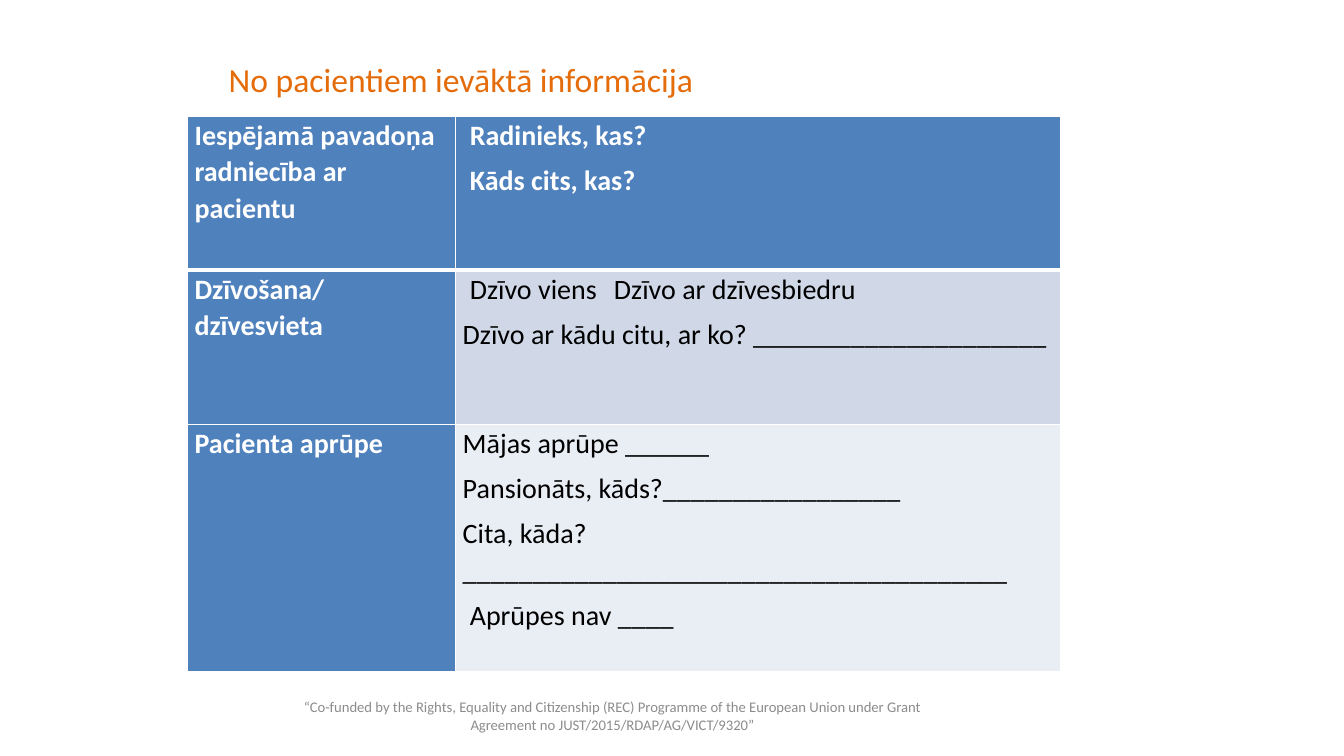
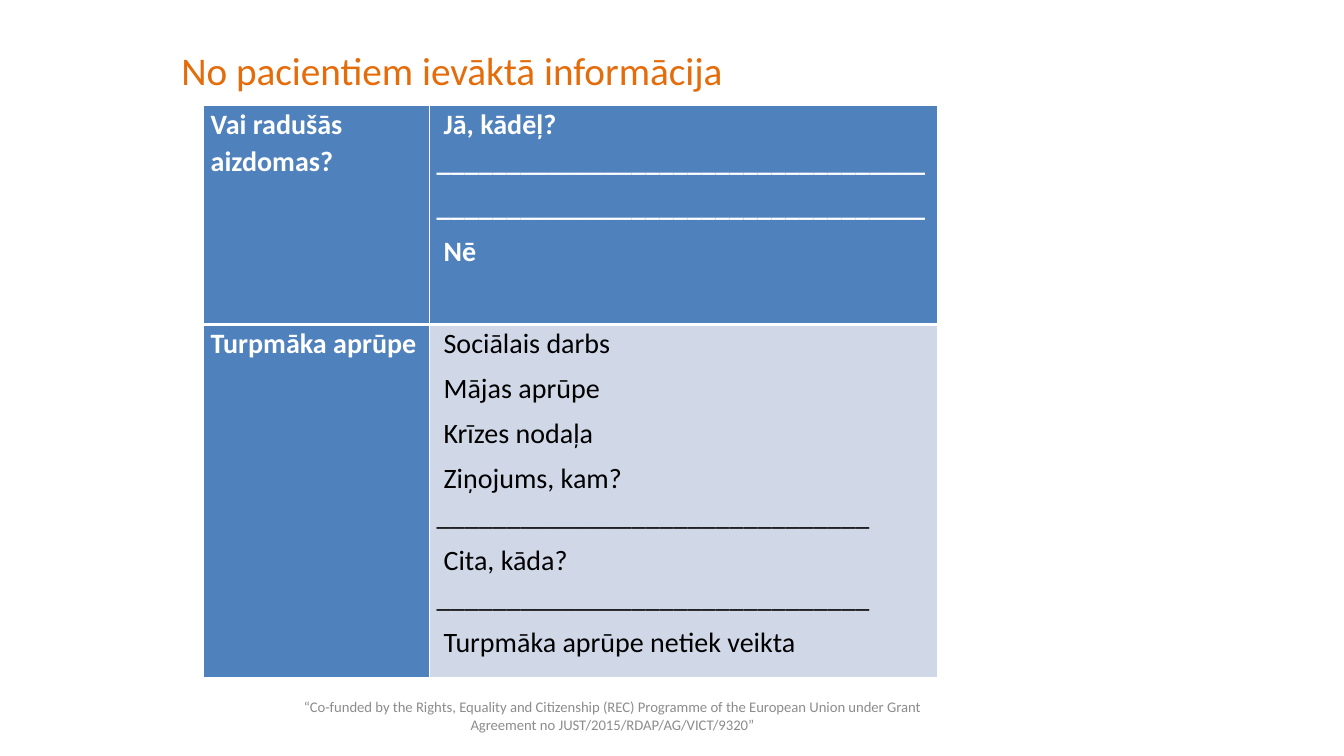
"""Build two slides of patient questionnaire tables."""
from lxml.etree import SubElement
from pptx import Presentation
from pptx.dml.color import RGBColor
from pptx.enum.text import MSO_ANCHOR, PP_ALIGN
from pptx.oxml.ns import qn
from pptx.util import Inches, Pt

FONT = "Calibri"
ORANGE, GRAY, BLUE = "E46C0A", "8C8C8C", "4F81BD"
WHITE, BLACK = "FFFFFF", "000000"
BANDS = ("D0D8E8", "E9EDF4")
INDENT = 0.07
TAB = 1.7

TITLE = "No pacientiem ievāktā informācija"
FOOTER = (
    "“Co-funded by the Rights, Equality and Citizenship (REC) Programme of the "
    "European Union under Grant Agreement no JUST/2015/RDAP/AG/VICT/9320”"
)
FOOTER_BOX = (2.63, 6.9, 6.89, 0.4)

SLIDES = [
    {
        "title_box": (2.17, 0.3, 9, 1.01),
        "title_size": 24,
        "table_corner": (1.86, 1.15),
        "columns": (2.66, 6),
        "rows": [
            (1.53, "Iespējamā pavadoņa radniecība ar pacientu", [
                ("Radinieks, kas?", INDENT),
                ("Kāds cits, kas?", INDENT),
            ]),
            (1.53, "Dzīvošana/dzīvesvieta", [
                ("Dzīvo viens\tDzīvo ar dzīvesbiedru", INDENT),
                ("Dzīvo ar kādu citu, ar ko? " + "_" * 21, 0),
            ]),
            (2.45, "Pacienta aprūpe", [
                ("Mājas aprūpe " + "_" * 6, 0),
                ("Pansionāts, kāds?" + "_" * 17, 0),
                ("Cita, kāda? " + "_" * 39, 0),
                ("Aprūpes nav " + "_" * 4, INDENT),
            ]),
        ],
    },
    {
        "title_box": (1.7, 0, 11.5, 1.45),
        "title_size": 28,
        "table_corner": (2.02, 1.05),
        "columns": (2.24, 5.04),
        "rows": [
            (2.17, "Vai radušās aizdomas?", [
                ("Jā, kādēļ? " + "_" * 35, INDENT),
                ("_" * 35, 0),
                ("Nē", INDENT),
            ]),
            (3.5, "Turpmāka aprūpe", [
                ("Sociālais darbs", INDENT),
                ("Mājas aprūpe", INDENT),
                ("Krīzes nodaļa", INDENT),
                ("Ziņojums, kam? " + "_" * 31, INDENT),
                ("Cita, kāda? " + "_" * 31, INDENT),
                ("Turpmāka aprūpe netiek veikta", INDENT),
            ]),
        ],
    },
]


def color(value):
    return RGBColor.from_string(value)


def write(frame, lines, size, fill, bold=False, align=PP_ALIGN.LEFT, spacing=None, after=0):
    frame.word_wrap = True
    for number, (text, indent) in enumerate(lines):
        paragraph = frame.add_paragraph() if number else frame.paragraphs[0]
        paragraph.alignment = align
        paragraph.line_spacing = spacing
        paragraph.space_after = Pt(after)
        properties = paragraph._p.get_or_add_pPr()
        properties.set("marL", "0")
        properties.set("indent", str(Inches(indent)))
        if "\t" in text:
            tabs = SubElement(properties, qn("a:tabLst"))
            SubElement(tabs, qn("a:tab"), pos=str(Inches(TAB)), algn="l")
        run = paragraph.add_run()
        run.text = text
        run.font.name = FONT
        run.font.size = Pt(size)
        run.font.bold = bold
        run.font.color.rgb = color(fill)


def add_text(slide, box, text, **style):
    shape = slide.shapes.add_textbox(*map(Inches, box))
    shape.text_frame.vertical_anchor = MSO_ANCHOR.MIDDLE
    write(shape.text_frame, [(text, 0)], **style)


def set_borders(cell, **widths):
    properties = cell._tc.get_or_add_tcPr()
    for side, width in widths.items():
        line = SubElement(properties, qn(f"a:ln{side}"), w=str(Pt(width)))
        solid = SubElement(line, qn("a:solidFill"))
        SubElement(solid, qn("a:srgbClr"), val=WHITE)


def fill_cell(cell, lines, row, is_label):
    heading = is_label or row == 0
    cell.margin_left = cell.margin_right = Inches(0.07)
    cell.margin_top = cell.margin_bottom = 0
    set_borders(cell, L=1, R=1, T=3 if row == 1 else 1, B=3 if row == 0 else 1)
    cell.fill.solid()
    cell.fill.fore_color.rgb = color(BLUE if heading else BANDS[(row - 1) % 2])
    write(cell.text_frame, lines, size=20, fill=WHITE if heading else BLACK,
          bold=heading, spacing=1.07, after=6)


def add_questions(slide, corner, columns, rows):
    size = (sum(columns), sum(height for height, _, _ in rows))
    frame = slide.shapes.add_table(len(rows), len(columns), *map(Inches, corner + size))
    table = frame.table
    table.first_row = table.horz_banding = False
    for column, width in zip(table.columns, columns):
        column.width = Inches(width)
    for row, (height, label, answers) in enumerate(rows):
        table.rows[row].height = Inches(height)
        fill_cell(table.cell(row, 0), [(label, 0)], row, True)
        fill_cell(table.cell(row, 1), answers, row, False)


def main():
    presentation = Presentation()
    presentation.slide_width = Inches(13.33)
    presentation.slide_height = Inches(7.5)
    for content in SLIDES:
        slide = presentation.slides.add_slide(presentation.slide_layouts[6])
        add_text(slide, FOOTER_BOX, FOOTER, size=10.5, fill=GRAY, align=PP_ALIGN.CENTER)
        add_text(slide, content["title_box"], TITLE, size=content["title_size"],
                 fill=ORANGE, spacing=0.9)
        add_questions(slide, content["table_corner"], content["columns"], content["rows"])
    presentation.save("out.pptx")


if __name__ == "__main__":
    main()
